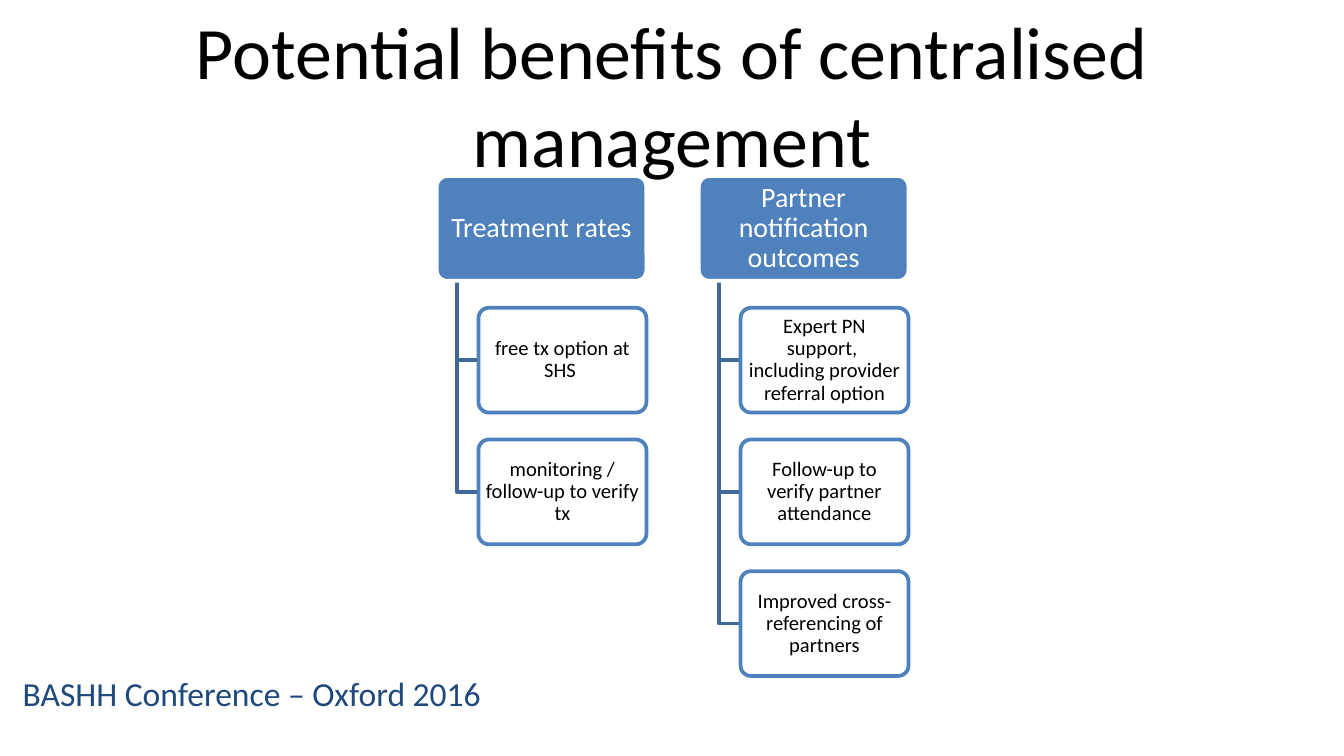
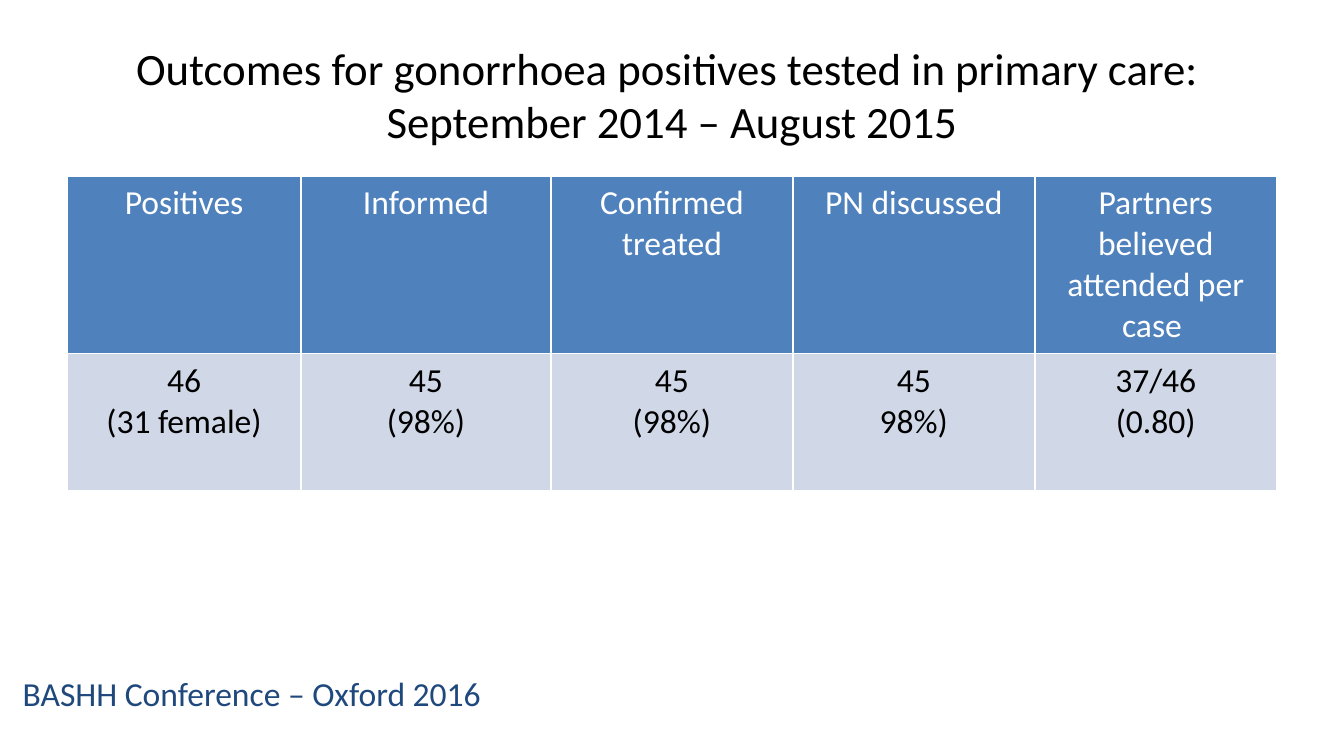
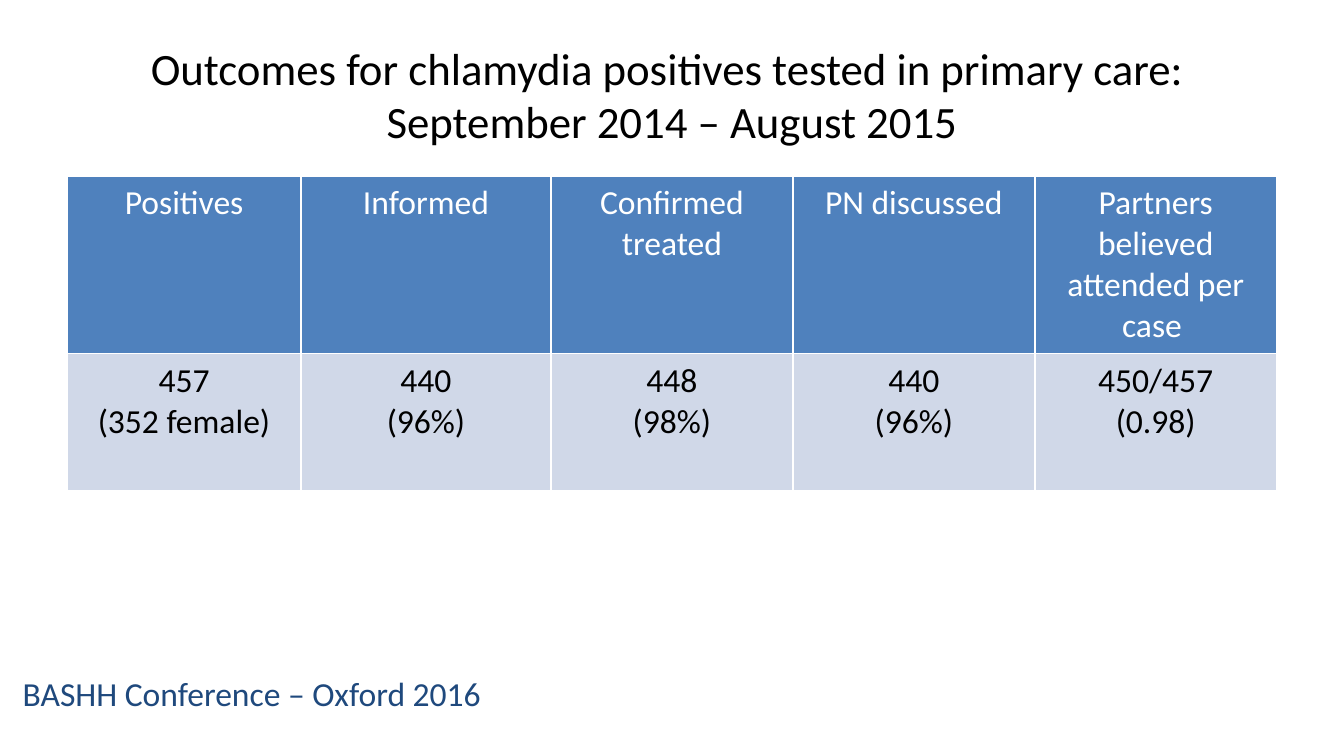
from pptx import Presentation
from pptx.dml.color import RGBColor
from pptx.enum.shapes import MSO_SHAPE as Preset
from pptx.enum.text import MSO_ANCHOR as Anchor, PP_ALIGN as Align
from pptx.util import Inches, Pt

FONT = "Calibri"
BLACK, WHITE, NAVY = "000000", "FFFFFF", "1F497D"
BLUE, STEEL, PALE = "4F81BD", "3F6797", "D0D8E8"


def colour(value):
    return RGBColor.from_string(value)


def write(frame, text, size=18, ink=BLACK, align=Align.CENTER, anchor=Anchor.TOP, inset=None, leading=None):
    frame.word_wrap = True
    frame.vertical_anchor = anchor
    if inset is not None:
        frame.margin_left = frame.margin_right = Inches(inset)
        frame.margin_top = frame.margin_bottom = Inches(0.02)
    frame.text = text
    for para in frame.paragraphs:
        para.alignment = align
        if leading:
            para.line_spacing = leading
        for span in para.runs:
            span.font.name = FONT
            span.font.size = Pt(size)
            span.font.bold = False
            span.font.color.rgb = colour(ink)


deck = Presentation()
deck.slide_width = Inches(10)
deck.slide_height = deck.slide_width * 9 // 16

titles = [
    ("Potential benefits of centralised management", 39.6),
    ("Outcomes for gonorrhoea positives tested in primary care: \vSeptember 2014 – August 2015", 24),
    ("Outcomes for chlamydia positives tested in primary care: \vSeptember 2014 – August 2015", 24),
]
pages = []
for title, size in titles:
    page = deck.slides.add_slide(deck.slide_layouts[6])
    footer = page.shapes.add_textbox(Inches(0.07), Inches(4.96), Inches(4.78), Inches(0.69))
    write(footer.text_frame, "BASHH Conference – Oxford 2016", ink=NAVY, align=Align.LEFT)
    heading = page.shapes.add_textbox(Inches(0.5), Inches(0.23), Inches(9), Inches(0.94))
    write(heading.text_frame, title, size=size, anchor=Anchor.MIDDLE)
    pages.append(page)

benefits = [
    ("Treatment rates", ["free tx option at SHS ", "monitoring / follow-up to verify tx"]),
    ("Partner notification outcomes", [
        "Expert PN support, \vincluding provider referral option",
        "Follow-up to verify partner attendance",
        "Improved cross-referencing of partners",
    ]),
]
shapes = pages[0].shapes
box_height, head_top, row_step = 0.78, 1.31, 0.98
head_bottom = head_top + box_height
for column, (head, details) in enumerate(benefits):
    left = 3.25 + 1.95 * column
    stem_left, card_left = left + 0.15, left + 0.31
    boxes = [(head, left, head_top, 1.56, BLUE, WHITE, 15, WHITE)]
    for row, detail in enumerate(details):
        card_top = head_top + row_step * (row + 1)
        card_middle = card_top + box_height / 2
        outline = shapes.build_freeform(Inches(stem_left), Inches(head_bottom))
        outline.add_line_segments(
            [(Inches(stem_left), Inches(card_middle)), (Inches(card_left), Inches(card_middle))], close=False)
        branch = outline.convert_to_shape()
        branch.shadow.inherit = False
        branch.fill.background()
        branch.line.color.rgb = colour(STEEL)
        branch.line.width = Pt(2)
        boxes.append((detail, card_left, card_top, 1.25, WHITE, BLUE, 11, BLACK))
    for text, x, y, width, fill, edge, size, ink in boxes:
        box = shapes.add_shape(Preset.ROUNDED_RECTANGLE, Inches(x), Inches(y), Inches(width), Inches(box_height))
        box.adjustments[0] = 0.1
        box.shadow.inherit = False
        box.fill.solid()
        box.fill.fore_color.rgb = colour(fill)
        box.line.color.rgb = colour(edge)
        box.line.width = Pt(2)
        write(box.text_frame, text, size=size, ink=ink, anchor=Anchor.MIDDLE, inset=0.03, leading=0.9)

measures = ["Positives", "Informed", "Confirmed treated", "PN discussed", "Partners believed\nattended per case "]
outcomes = [
    ["46\n(31 female)", "45\n(98%)", "45\n(98%)", "45\n98%)", "37/46\n(0.80)"],
    ["457\n(352 female)", "440\n(96%)", "448\n(98%)", "440\n(96%)", "450/457\n(0.98)"],
]
for page, results in zip(pages[1:], outcomes):
    table = page.shapes.add_table(2, 5, Inches(0.5), Inches(1.31), Inches(9), Inches(2.34)).table
    for column, width in zip(table.columns, [1.74, 1.86, 1.8, 1.8, 1.8]):
        column.width = Inches(width)
    rows = [(measures, 1.32, BLUE, WHITE), (results, 1.02, PALE, BLACK)]
    for row, (texts, height, fill, ink) in zip(table.rows, rows):
        row.height = Inches(height)
        for cell, text in zip(row.cells, texts):
            cell.fill.solid()
            cell.fill.fore_color.rgb = colour(fill)
            write(cell.text_frame, text, ink=ink)

deck.save("out.pptx")
